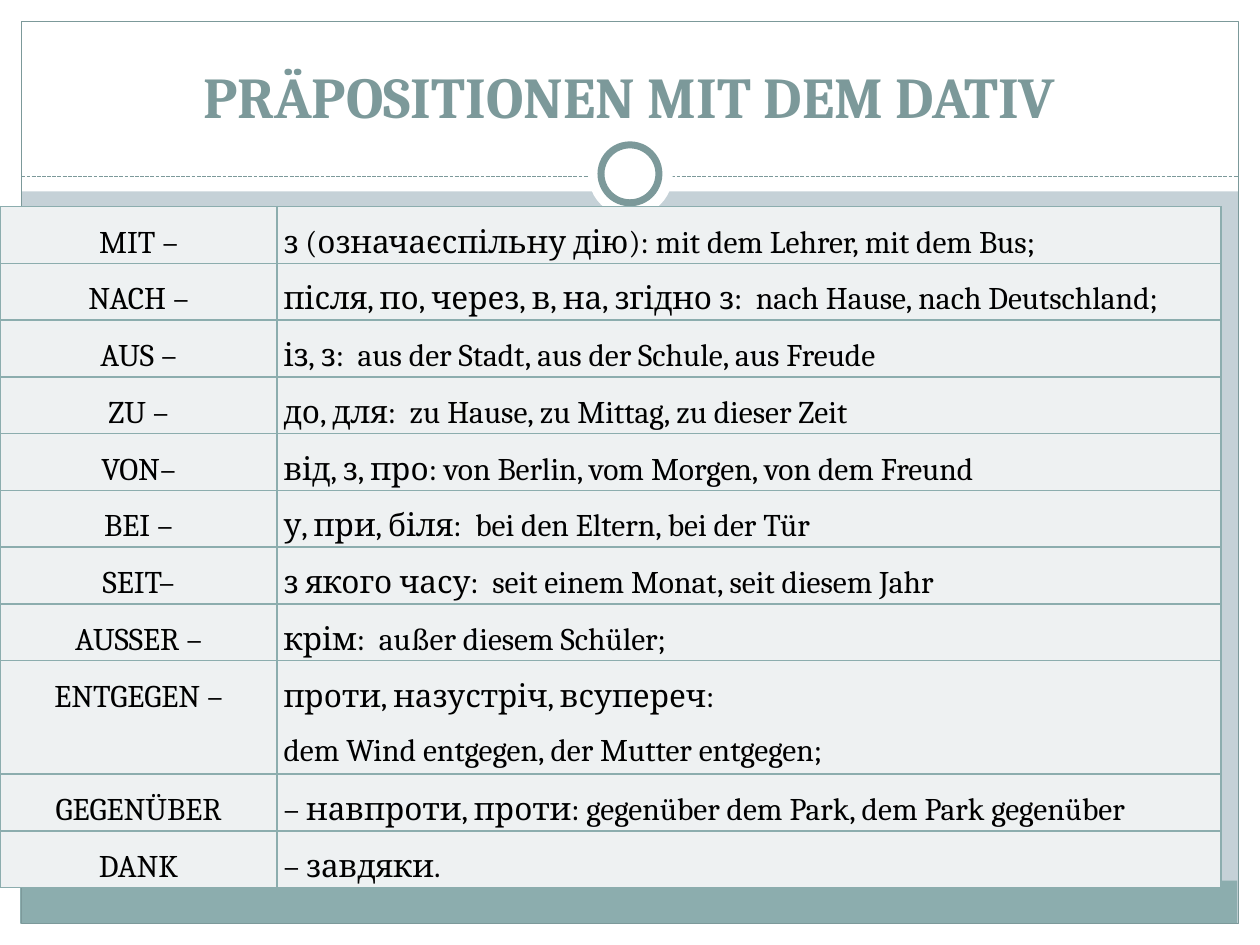
from lxml.etree import SubElement
from pptx import Presentation
from pptx.dml.color import RGBColor
from pptx.enum.dml import MSO_LINE
from pptx.enum.shapes import MSO_CONNECTOR, MSO_SHAPE
from pptx.enum.text import MSO_ANCHOR, PP_ALIGN
from pptx.oxml.ns import qn
from pptx.util import Inches, Pt

WHITE, BLACK = "FFFFFF", "000000"
BACKDROP, TEAL, FRAME, CELL = "C5D1D7", "8CADAE", "7C999A", "EEF1F2"
ROW_HEIGHT = 0.43

PREPOSITIONS = [
    ("MIT –", ["з (означаєспільну дію): mit dem Lehrer, mit dem Bus;"]),
    ("NACH –", ["після, по, через, в, на, згідно з:  nach Hause, nach Deutschland;"]),
    ("AUS –", ["із, з:  aus der Stadt, aus der Schule, aus Freude"]),
    ("ZU –", ["до, для:  zu Hause, zu Mittag, zu dieser Zeit"]),
    ("VON–", ["від, з, про: von Berlin, vom Morgen, von dem Freund"]),
    ("BEI –", ["у, при, біля:  bei den Eltern, bei der Tür"]),
    ("SEIT–", ["з якого часу:  seit einem Monat, seit diesem Jahr"]),
    ("AUSSER –", ["крім:  außer diesem Schüler;"]),
    ("ENTGEGEN –", ["проти, назустріч, всупереч:",
                    "dem Wind entgegen, der Mutter entgegen;"]),
    ("GEGENÜBER", ["– навпроти, проти: gegenüber dem Park, dem Park gegenüber"]),
    ("DANK", ["– завдяки."]),
]


def color(hex_string):
    return RGBColor.from_string(hex_string)


def write(frame, lines, size=18, ink=BLACK, bold=False,
          align=PP_ALIGN.LEFT, spacing=1.0):
    frame.word_wrap = True
    for index, line in enumerate(lines):
        paragraph = frame.add_paragraph() if index else frame.paragraphs[0]
        paragraph.alignment = align
        paragraph.line_spacing = spacing
        run = paragraph.add_run()
        run.text = line
        run.font.name = "Cambria"
        run.font.size = Pt(size)
        run.font.bold = bold
        run.font.color.rgb = color(ink)


def add_figure(slide, box, kind=MSO_SHAPE.RECTANGLE, fill=None, line=None, width=0.75):
    figure = slide.shapes.add_shape(kind, *map(Inches, box))
    figure.shadow.inherit = False
    if fill:
        figure.fill.solid()
        figure.fill.fore_color.rgb = color(fill)
    else:
        figure.fill.background()
    if line:
        figure.line.color.rgb = color(line)
        figure.line.width = Pt(width)
    else:
        figure.line.fill.background()


def add_dashed_line(slide, left, right, y):
    divider = slide.shapes.add_connector(
        MSO_CONNECTOR.STRAIGHT, Inches(left), Inches(y), Inches(right), Inches(y))
    divider.line.color.rgb = color(FRAME)
    divider.line.width = Pt(0.75)
    divider.line.dash_style = MSO_LINE.SQUARE_DOT
    SubElement(divider._element.spPr, qn("a:effectLst"))


def add_title(slide, text):
    title = slide.shapes.add_textbox(*map(Inches, (0.33, 0.25, 9.33, 0.83)))
    title.text_frame.vertical_anchor = MSO_ANCHOR.BOTTOM
    write(title.text_frame, [text], size=33, ink=FRAME, bold=True,
          align=PP_ALIGN.CENTER)


def format_cell(cell):
    cell.margin_left = cell.margin_right = Inches(0.05)
    cell.margin_top = cell.margin_bottom = 0
    properties = cell._tc.get_or_add_tcPr()
    for side in ("a:lnL", "a:lnR", "a:lnT", "a:lnB"):
        border = SubElement(properties, qn(side), w=str(Pt(1)))
        border_fill = SubElement(border, qn("a:solidFill"))
        SubElement(border_fill, qn("a:srgbClr"), val=TEAL)
    cell.fill.solid()
    cell.fill.fore_color.rgb = color(CELL)


def add_preposition_table(slide):
    line_count = sum(len(meaning) for _, meaning in PREPOSITIONS)
    table = slide.shapes.add_table(
        len(PREPOSITIONS), 2, Inches(0), Inches(1.64),
        Inches(9.69), Inches(ROW_HEIGHT * line_count)).table
    table.first_row = table.horz_banding = False
    for column, width in zip(table.columns, (2.2, 7.49)):
        column.width = Inches(width)
    for row, (preposition, meaning) in zip(table.rows, PREPOSITIONS):
        row.height = Inches(ROW_HEIGHT * len(meaning))
        for cell in row.cells:
            format_cell(cell)
        write(row.cells[0].text_frame, [preposition], align=PP_ALIGN.CENTER, spacing=1.5)
        write(row.cells[1].text_frame, meaning, spacing=1.5)


def main():
    presentation = Presentation()
    presentation.slide_width, presentation.slide_height = Inches(10), Inches(7.5)
    slide = presentation.slides.add_slide(presentation.slide_layouts[6])
    slide.background.fill.solid()
    slide.background.fill.fore_color.rgb = color(BACKDROP)

    # White margins and header
    for margin in ((0, 7.33, 10, 0.17), (0, 0, 10, 1.52),
                   (0, 0, 0.17, 7.5), (9.83, 0, 0.17, 7.5)):
        add_figure(slide, margin, fill=WHITE)

    # Footer band, frame and divider with ring
    add_figure(slide, (0.16, 6.99, 9.66, 0.34), fill=TEAL)
    add_figure(slide, (0.17, 0.17, 9.66, 7.16), line=FRAME)
    add_dashed_line(slide, 0.17, 9.83, 1.4)
    add_figure(slide, (4.67, 1.05, 0.67, 0.67), MSO_SHAPE.OVAL, fill=WHITE)
    add_figure(slide, (4.77, 1.15, 0.46, 0.46), MSO_SHAPE.OVAL,
               fill=WHITE, line=FRAME, width=4)

    # Content
    add_title(slide, "PRÄPOSITIONEN MIT DEM DATIV")
    add_preposition_table(slide)
    presentation.save("out.pptx")


if __name__ == "__main__":
    main()
